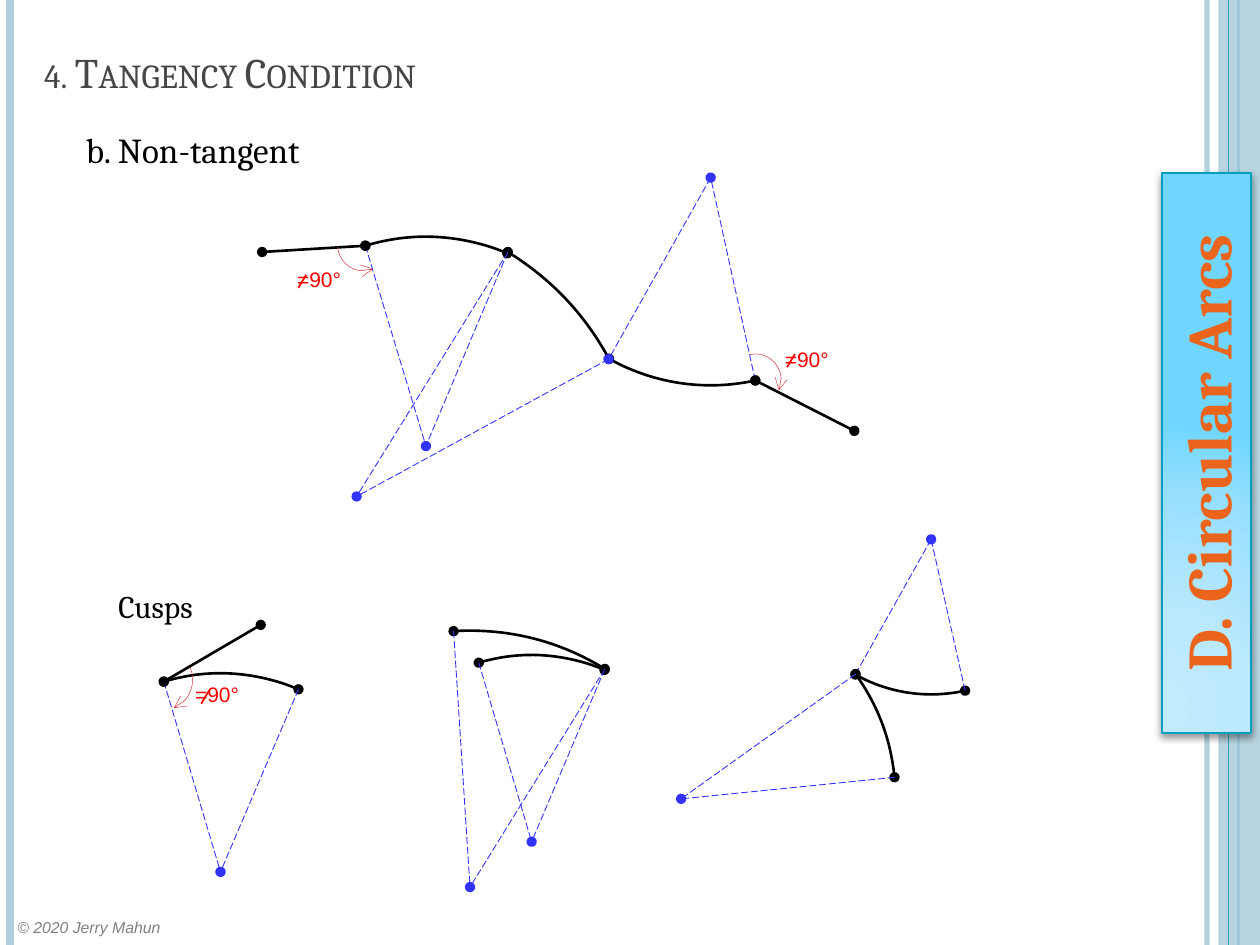
from math import atan2, degrees, dist
from lxml.etree import SubElement
from pptx import Presentation
from pptx.dml.color import RGBColor
from pptx.enum.dml import MSO_LINE
from pptx.enum.shapes import MSO_CONNECTOR, MSO_SHAPE
from pptx.enum.text import MSO_ANCHOR, MSO_AUTO_SIZE, PP_ALIGN
from pptx.oxml import parse_xml
from pptx.oxml.ns import nsdecls, qn
from pptx.util import Pt

COLORS = {
    "band": "ADCEDC", "rule": "2DA2BF", "title": "464646", "text": "000000",
    "note": "808080", "banner": "EB641B", "banner_line": "079EC3",
    "curve": "000000", "radius": "3333FF", "angle": "DA1F28", "label": "FF0000",
}
GRADIENT = [(0, "C2EBFD"), (30, "BCE9FE"), (75, "96DFFE"), (100, "70D6FF")]
FONTS = {
    "title": {"name": "Cambria", "size": Pt(24), "bold": False},
    "body": {"name": "Cambria", "size": Pt(20)},
    "caption": {"name": "Cambria", "size": Pt(18)},
    "note": {"name": "Arial", "size": Pt(9), "italic": True},
    "label": {"name": "Arial", "size": Pt(12)},
    "banner": {"name": "Cambria", "size": Pt(36), "bold": True},
}


class Drawing:
    def __init__(self, slide):
        self.slide = slide
        self.shapes = slide.shapes

    def group(self):
        self.shapes = self.slide.shapes.add_group_shape().shapes

    def fill_text(self, tf, text, font, color, **frame):
        for key, value in frame.items():
            setattr(tf, key, value)
        p = tf.paragraphs[0]
        r = p.add_run()
        r.text = text
        for key, value in FONTS[font].items():
            setattr(r.font, key, value)
        r.font.color.rgb = RGBColor.from_string(COLORS[color])
        return p, r

    def placeholder(self, sp, box, text, font, color, anchor):
        sp.left, sp.top, sp.width, sp.height = map(Pt, box)
        p, r = self.fill_text(sp.text_frame, text, font, color, vertical_anchor=anchor,
                              auto_size=MSO_AUTO_SIZE.NONE, word_wrap=True)
        p.alignment = PP_ALIGN.LEFT
        return p, r

    def text(self, box, text, font, color, wrap=True):
        sp = self.shapes.add_textbox(*map(Pt, box))
        self.fill_text(sp.text_frame, text, font, color, word_wrap=wrap,
                       auto_size=MSO_AUTO_SIZE.SHAPE_TO_FIT_TEXT)

    def stroke(self, sp, color, width, dash=None, head=None, tail=None):
        sp.line.color.rgb = RGBColor.from_string(COLORS[color])
        sp.line.width = Pt(width)
        if dash:
            sp.line.dash_style = dash
        ln = sp._element.spPr.find(qn("a:ln"))
        for tag, kind in (("a:headEnd", head), ("a:tailEnd", tail)):
            if kind:
                SubElement(ln, qn(tag), type=kind)

    def line(self, a, b, color, width, **ends):
        sp = self.shapes.add_connector(MSO_CONNECTOR.STRAIGHT, *map(Pt, (*a, *b)))
        self.stroke(sp, color, width, **ends)
        SubElement(sp._element.spPr, qn("a:effectLst"))
        return sp

    def rect(self, box):
        sp = self.shapes.add_shape(MSO_SHAPE.RECTANGLE, *map(Pt, box))
        sp.shadow.inherit = False
        return sp

    def arc(self, center, radius, start, end, color, width, turn=0, **ends):
        x, y = center
        box = (x - radius, y - radius, 2 * radius, 2 * radius)
        sp = self.shapes.add_shape(MSO_SHAPE.ARC, *map(Pt, box))
        sp.shadow.inherit = False
        sp.fill.background()
        sp.rotation = turn
        for i, angle in enumerate((start, end)):
            sp.adjustments[i] = (angle - turn) % 360 * 0.6
        self.stroke(sp, color, width, **ends)

    def tangent(self, a, b):
        self.line(a, b, "curve", 1.5, head="oval", tail="oval")

    def sector(self, center, start, end, turn, end_dot=None):
        angles = [degrees(atan2(y - center[1], x - center[0])) for x, y in (start, end)]
        self.arc(center, dist(center, start), *angles, "curve", 1.5, turn,
                 head="oval", tail="oval")
        for point, head, tail in ((start, None, "oval"), (end, end_dot, None)):
            self.line(point, center, "radius", 0.5, dash=MSO_LINE.LONG_DASH,
                      head=head, tail=tail)

    def not_square(self, vertex, radius, start, end, label, slash, **arrow):
        self.arc(vertex, radius, start, end, "angle", 0.25, **arrow)
        self.text((*label, 52, 21.6), "=90°", "label", "label")
        x, y = slash
        self.line((x, y), (x - 4.5, y + 7.5), "label", 1)

    def banner(self, box, text):
        sp = self.rect(box)
        sp.rotation = 270
        stops = "".join(f'<a:gs pos="{pos * 1000}"><a:srgbClr val="{color}"/></a:gs>'
                        for pos, color in GRADIENT)
        fill = parse_xml(
            f'<a:gradFill {nsdecls("a")}><a:gsLst>{stops}</a:gsLst><a:path path="circle">'
            '<a:fillToRect l="5000" t="100000" r="120000" b="10000"/></a:path></a:gradFill>')
        spPr = sp._element.spPr
        spPr.find(qn("a:prstGeom")).addnext(fill)
        self.stroke(sp, "banner_line", 1)
        shadow = SubElement(spPr.find(qn("a:effectLst")), qn("a:outerShdw"),
                            blurRad=str(Pt(4)), dist=str(Pt(2)), dir="5400000")
        black = SubElement(shadow, qn("a:srgbClr"), val="000000")
        SubElement(black, qn("a:alpha"), val="40000")
        p, r = self.fill_text(sp.text_frame, text, "banner", "banner", word_wrap=False,
                              vertical_anchor=MSO_ANCHOR.MIDDLE)
        p.alignment = PP_ALIGN.CENTER


def set_alpha(sp, percent):
    color = sp._element.spPr.find(".//" + qn("a:srgbClr"))
    SubElement(color, qn("a:alpha"), val=str(percent * 1000))


def draw_frame(d):
    inner = d.line((689.8, 0), (689.8, 540), "band", 3)
    set_alpha(inner, 93)
    d.line((5.8, 0), (5.8, 540), "band", 4.5)
    d.line((707.8, 0), (707.8, 540), "rule", 1.5)
    side = d.rect((696.2, 0, 23.8, 540))
    side.fill.solid()
    side.fill.fore_color.rgb = RGBColor.from_string(COLORS["band"])
    set_alpha(side, 87)
    side.line.fill.background()
    d.line((702, 0), (702, 540), "rule", 0.75)
    d.text((2.9, 520.6, 103.7, 18), "© 2020 Jerry Mahun", "note", "note")
    d.banner((529.2, 233.3, 320.4, 51.1), "D. Circular Arcs")


def draw_text(d):
    title, body = d.slide.placeholders
    p, r = d.placeholder(title, (18, 21.6, 606.2, 37.4), "4. Tangency Condition",
                         "title", "title", MSO_ANCHOR.BOTTOM)
    r._r.get_or_add_rPr().set("cap", "small")
    p, r = d.placeholder(body, (41.8, 69.8, 581.8, 439.9), "b. Non-tangent",
                         "body", "text", MSO_ANCHOR.TOP)
    p.space_before = Pt(6)
    pPr = p._p.get_or_add_pPr()
    pPr.set("marL", "0")
    pPr.set("indent", "0")
    SubElement(pPr, qn("a:buNone"))
    d.text((60.5, 331.9, 66.2, 28.8), "Cusps", "caption", "text", wrap=False)


def draw_line_cusp(d):
    d.group()
    vertex = (93.6, 389.5)
    d.sector((126, 498.2), vertex, (170.6, 393.8), 343.1)
    d.tangent(vertex, (149, 357.1))
    d.not_square((92.5, 388.4), 17.6, 336.5, 66.6, (104.4, 385.9), (119.5, 394.6), tail="arrow")


def draw_nested_cusp(d):
    d.group()
    cusp = (345.6, 382.3)
    d.sector((268.6, 506.9), (259.2, 360.7), cusp, 31.7)
    d.sector((303.8, 481), (273.6, 378.7), cusp, 343.1)


def draw_compound_curve(d):
    d.group()
    p1, p2, p3, p4 = (208.8, 140.4), (290.2, 144), (347.8, 205.2), (431.6, 217.4)
    d.sector((203.8, 283.7), p2, p3, 31.7)
    d.sector((243.4, 254.9), p1, p2, 343.1)
    d.sector((406.1, 101.5), p4, p3, 201.7, end_dot="oval")
    d.tangent(p1, (149.8, 144))
    d.tangent(p4, (488.2, 246.2))
    d.not_square((207.7, 140), 14.8, 67.9, 175.3, (162.7, 149), (175, 157), head="arrow")
    d.not_square((431.6, 217.1), 14.8, 258.3, 24, (441.4, 194.4), (454.3, 202.3), tail="arrow")


def draw_reverse_cusp(d):
    d.group()
    cusp = (488.9, 385.2)
    d.sector((532.1, 308.2), (551.5, 394.6), cusp, 201.7)
    d.sector((389.2, 456.5), cusp, (511.2, 444.2), 24.8)


def main():
    prs = Presentation()
    prs.slide_width, prs.slide_height = Pt(720), Pt(540)
    d = Drawing(prs.slides.add_slide(prs.slide_layouts[1]))
    for draw in (draw_frame, draw_text, draw_line_cusp, draw_nested_cusp,
                 draw_compound_curve, draw_reverse_cusp):
        draw(d)
    prs.save("out.pptx")


if __name__ == "__main__":
    main()
